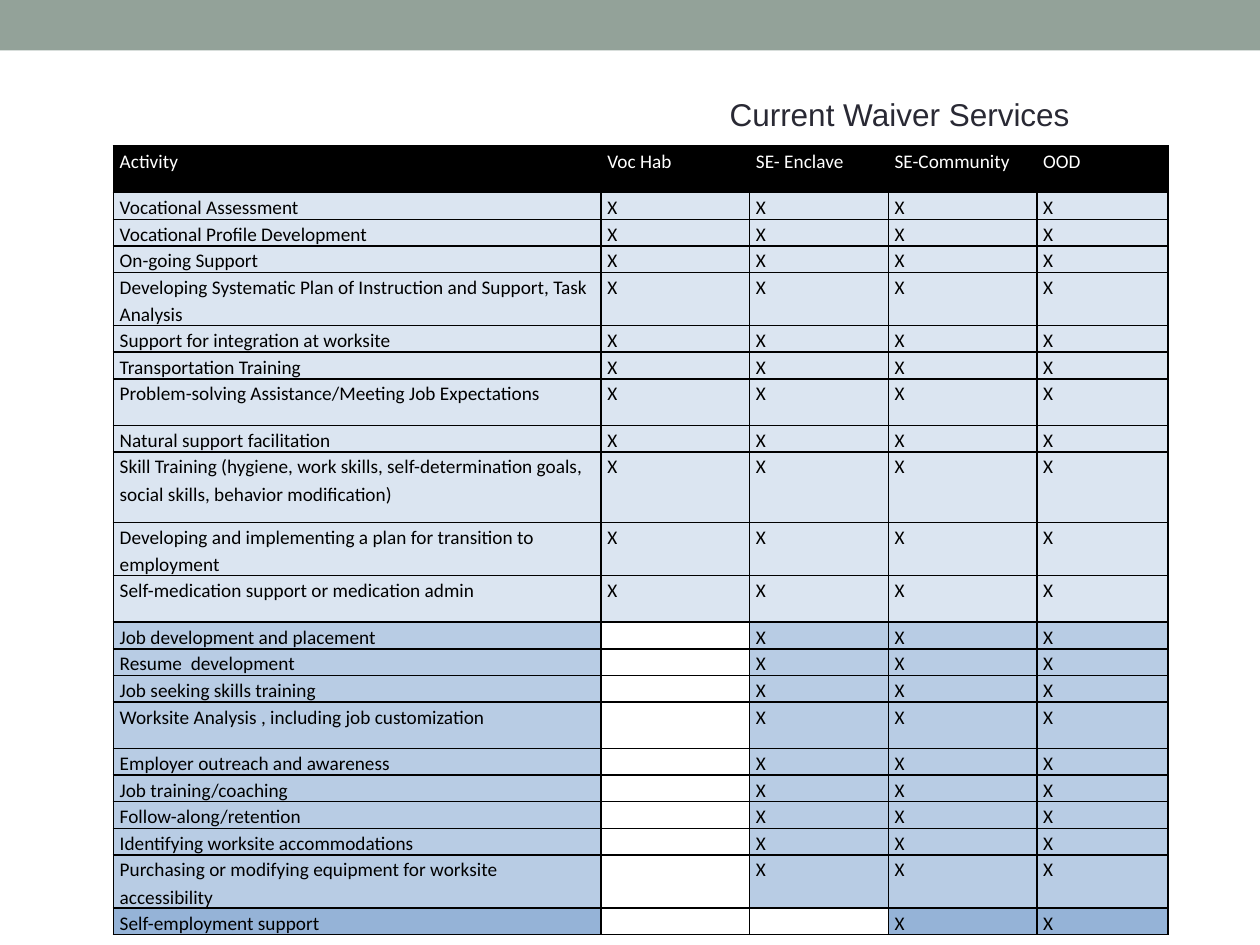
from lxml import etree
from pptx import Presentation
from pptx.dml.color import RGBColor
from pptx.enum.shapes import MSO_SHAPE
from pptx.enum.text import MSO_ANCHOR, MSO_AUTO_SIZE, PP_ALIGN
from pptx.oxml.ns import qn
from pptx.util import Inches, Pt

RECTANGLE = MSO_SHAPE.RECTANGLE
TOP, MIDDLE = MSO_ANCHOR.TOP, MSO_ANCHOR.MIDDLE
FIT_SHAPE = MSO_AUTO_SIZE.SHAPE_TO_FIT_TEXT
LEFT = PP_ALIGN.LEFT
TITLE_ONLY = 5

COLORS = {
    "band": "93A299",
    "title": "292934",
    "header": "000000",
    "header_text": "FFFFFF",
    "text": "000000",
    "border": "000000",
    "not_offered": "FFFFFF",
    "all_services": "DBE5F1",
    "employment_services": "B8CCE4",
    "self_employment": "95B3D7",
}

COLUMN_WIDTHS = [3.87, 1.18, 1.1, 1.18, 1.04]
SINGLE, DOUBLE, TRIPLE = 0.19, 0.37, 0.56
BORDER_WIDTH = Pt(1)
CELL_FONT = {"name": "Calibri", "size": Pt(11), "bold": False}
CELL_FORMAT = {
    "margin_left": Inches(0.05),
    "margin_right": Inches(0.05),
    "margin_top": 0,
    "margin_bottom": 0,
    "vertical_anchor": TOP,
}

SERVICES = ["Activity", "Voc Hab", "SE- Enclave", "SE-Community", "OOD"]
ACTIVITY_GROUPS = [
    ("all_services", 1, [
        ("Vocational Assessment", SINGLE),
        ("Vocational Profile Development", SINGLE),
        ("On-going Support", SINGLE),
        ("Developing Systematic Plan of Instruction and Support, Task Analysis", DOUBLE),
        ("Support for integration at worksite", SINGLE),
        ("Transportation Training", SINGLE),
        ("Problem-solving Assistance/Meeting Job Expectations", DOUBLE),
        ("Natural support facilitation", SINGLE),
        ("Skill Training (hygiene, work skills, self-determination goals, "
         "social skills, behavior modification)", TRIPLE),
        ("Developing and implementing a plan for transition to employment", DOUBLE),
        ("Self-medication support or medication admin", DOUBLE),
    ]),
    ("employment_services", 2, [
        ("Job development and placement", SINGLE),
        ("Resume  development", SINGLE),
        ("Job seeking skills training", SINGLE),
        ("Worksite Analysis , including job customization", DOUBLE),
        ("Employer outreach and awareness", SINGLE),
        ("Job training/coaching", SINGLE),
        ("Follow-along/retention", SINGLE),
        ("Identifying worksite accommodations", SINGLE),
        ("Purchasing or modifying equipment for worksite accessibility", DOUBLE),
    ]),
    ("self_employment", 3, [("Self-employment support", SINGLE)]),
]


def color(key):
    return RGBColor.from_string(COLORS[key])


def apply_format(target, values):
    for attribute, value in values.items():
        setattr(target, attribute, value)


def add_band(slide, left, top, width, height):
    band = slide.shapes.add_shape(RECTANGLE, left, top, width, height)
    band.shadow.inherit = False
    band.fill.solid()
    band.fill.fore_color.rgb = color("band")
    band.line.fill.background()


def place_title(slide, left, top, width, height):
    title = slide.shapes.title
    apply_format(title, {"left": left, "top": top, "width": width, "height": height})
    title.text = "Current Waiver Services"
    apply_format(title.text_frame, {
        "word_wrap": False, "auto_size": FIT_SHAPE, "vertical_anchor": MIDDLE,
    })
    heading = title.text_frame.paragraphs[0]
    heading.alignment = LEFT
    font = heading.runs[0].font
    apply_format(font, {"name": "Arial", "size": Pt(18)})
    font.color.rgb = color("title")


def add_borders(cell):
    properties = cell._tc.get_or_add_tcPr()
    for side in ("lnL", "lnR", "lnT", "lnB"):
        border = etree.SubElement(properties, qn(f"a:{side}"), w=str(BORDER_WIDTH))
        fill = etree.SubElement(border, qn("a:solidFill"))
        etree.SubElement(fill, qn("a:srgbClr"), val=COLORS["border"])


def fill_cell(cell, text, fill, text_color):
    apply_format(cell, CELL_FORMAT)
    add_borders(cell)
    cell.fill.solid()
    cell.fill.fore_color.rgb = color(fill)
    paragraph = cell.text_frame.paragraphs[0]
    paragraph.line_spacing = 1.15
    if text:
        run = paragraph.add_run()
        run.text = text
        apply_format(run.font, CELL_FONT)
        run.font.color.rgb = color(text_color)
    else:
        size = str(int(CELL_FONT["size"].pt * 100))
        etree.SubElement(paragraph._p, qn("a:endParaRPr"), sz=size)


def activity_rows():
    yield DOUBLE, [(service, "header", "header_text") for service in SERVICES]
    for fill, first_offered, activities in ACTIVITY_GROUPS:
        for activity, height in activities:
            row = [(activity, fill, "text")]
            for column in range(1, len(SERVICES)):
                offered = column >= first_offered
                row.append(("X", fill, "text") if offered else ("", "not_offered", "text"))
            yield height, row


def add_services_table(slide, left, top, width, height):
    rows = list(activity_rows())
    table = slide.shapes.add_table(
        len(rows), len(SERVICES), left, top, width, height).table
    table.horz_banding = False
    for column, column_width in zip(table.columns, COLUMN_WIDTHS):
        column.width = Inches(column_width)
    for table_row, (row_height, contents) in zip(table.rows, rows):
        table_row.height = Inches(row_height)
        for cell, content in zip(table_row.cells, contents):
            fill_cell(cell, *content)


def main():
    presentation = Presentation()
    presentation.slide_width = Inches(10)
    presentation.slide_height = Inches(7.5)
    slide = presentation.slides.add_slide(presentation.slide_layouts[TITLE_ONLY])
    add_band(slide, 0, 0, presentation.slide_width, Inches(0.4))
    place_title(slide, Inches(5.69), Inches(0.7), Inches(3.56), Inches(0.4))
    add_services_table(slide, Inches(0.9), Inches(1.16), Inches(8.37), Inches(6.25))
    presentation.save("out.pptx")


if __name__ == "__main__":
    main()
